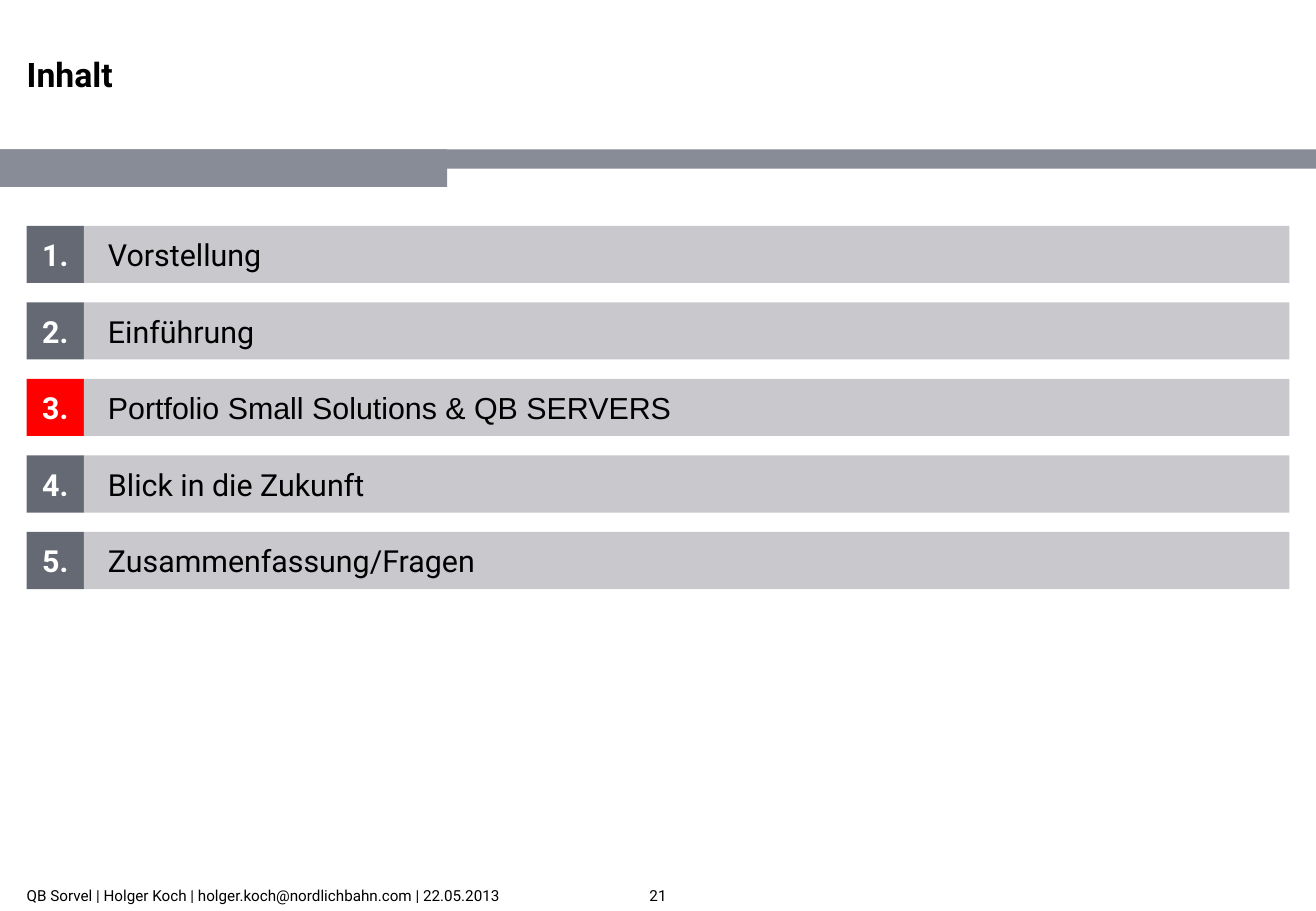
from dataclasses import dataclass

from pptx import Presentation
from pptx.dml.color import RGBColor
from pptx.enum.shapes import MSO_SHAPE
from pptx.enum.text import MSO_ANCHOR, PP_ALIGN
from pptx.util import Inches, Pt

RECTANGLE = MSO_SHAPE.RECTANGLE
TOP, MIDDLE = MSO_ANCHOR.TOP, MSO_ANCHOR.MIDDLE
LEFT, CENTER = PP_ALIGN.LEFT, PP_ALIGN.CENTER


@dataclass(frozen=True)
class Theme:
    band: str = "878C96"
    number: str = "646973"
    current: str = "FF0000"
    bar: str = "C8C8CD"
    text: str = "000000"
    inverse: str = "FFFFFF"
    font: str = "Roboto"
    current_font: str = "Arial"
    title_size: int = 20
    agenda_size: int = 18
    footer_size: int = 9


THEME = Theme()
WIDTH, HEIGHT = 10.83, 7.5
MARGIN = 0.22
CURRENT_TOPIC = 3
TOPICS = [
    "Vorstellung",
    "Einführung",
    "Portfolio Small Solutions & QB SERVERS",
    "Blick in die Zukunft",
    "Zusammenfassung/Fragen",
]


def add_rectangle(slide, box, color):
    shape = slide.shapes.add_shape(RECTANGLE, *map(Inches, box))
    shape.shadow.inherit = False
    shape.fill.solid()
    shape.fill.fore_color.rgb = RGBColor.from_string(color)
    shape.line.fill.background()
    return shape


def write(shape, text, size, color=THEME.text, bold=False, align=LEFT,
          anchor=MIDDLE, wrap=False, font=THEME.font, indent=0):
    frame = shape.text_frame
    frame.word_wrap = wrap
    frame.vertical_anchor = anchor
    paragraph = frame.paragraphs[0]
    paragraph.alignment = align
    if indent:
        paragraph._p.get_or_add_pPr().set("marL", str(Inches(indent)))
    run = paragraph.add_run()
    run.text = text
    run.font.name = font
    run.font.size = Pt(size)
    run.font.bold = bold
    run.font.color.rgb = RGBColor.from_string(color)


def add_text(slide, box, text, size, **style):
    shape = slide.shapes.add_textbox(*map(Inches, box))
    frame = shape.text_frame
    frame.margin_left = frame.margin_right = 0
    frame.margin_top = frame.margin_bottom = 0
    write(shape, text, size, **style)


def add_header(slide, left, top, width):
    # Title above a stepped band
    add_text(slide, (left + MARGIN, top + 0.44, 7.56, 0.71), "Inhalt",
             THEME.title_size, bold=True, anchor=TOP, wrap=True)
    for band_width, band_height in ((width, 0.16), (3.68, 0.31)):
        add_rectangle(slide, (left, top + 1.23, band_width, band_height),
                      THEME.band)


def add_agenda(slide, left, top, width, row_height=0.47, pitch=0.63):
    # One numbered bar per topic, the current one highlighted
    for number, topic in enumerate(TOPICS, start=1):
        current = number == CURRENT_TOPIC
        row_top = top + (number - 1) * pitch
        badge = add_rectangle(slide, (left, row_top, row_height, row_height),
                              THEME.current if current else THEME.number)
        write(badge, f"{number}.", THEME.agenda_size, THEME.inverse,
              bold=True, align=CENTER)
        bar = add_rectangle(
            slide, (left + row_height, row_top, width - row_height, row_height),
            THEME.bar)
        write(bar, topic, THEME.agenda_size, indent=0.1,
              font=THEME.current_font if current else THEME.font)


def add_footer(slide, left, top, width, height=0.1):
    # Author line and centred page number
    add_text(slide, (left + MARGIN, top, 4.06, height),
             "QB Sorvel | Holger Koch | holger.koch@nordlichbahn.com | 22.05.2013",
             THEME.footer_size)
    number_width = 2.08
    add_text(slide, (left + (width - number_width) / 2, top, number_width, height),
             "21", THEME.footer_size, align=CENTER)


def main():
    presentation = Presentation()
    presentation.slide_width = Inches(WIDTH)
    presentation.slide_height = Inches(HEIGHT)
    slide = presentation.slides.add_slide(presentation.slide_layouts[6])
    add_header(slide, 0, 0, WIDTH)
    add_agenda(slide, MARGIN, 1.86, WIDTH - 2 * MARGIN)
    add_footer(slide, 0, 7.32, WIDTH)
    presentation.save("out.pptx")


if __name__ == "__main__":
    main()
